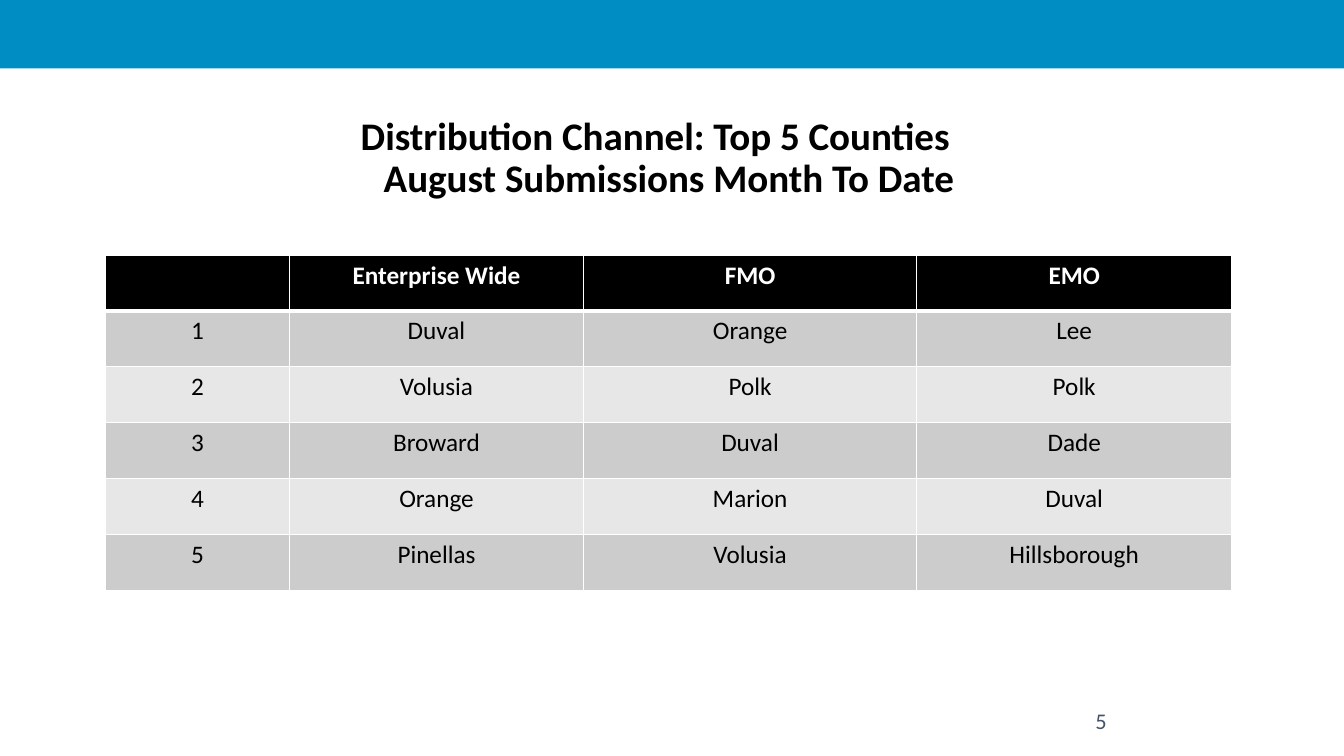
import lxml.etree
import pptx
import pptx.dml.color
import pptx.enum.shapes
import pptx.enum.text
import pptx.oxml.ns
import pptx.util

Inches = pptx.util.Inches
Anchor = pptx.enum.text.MSO_ANCHOR
COLORS = {
    "banner": "008DC4",
    "black": "000000",
    "white": "FFFFFF",
    "slate": "44546A",
    "odd": "CCCCCC",
    "even": "E7E7E7",
}
COLUMN_WIDTHS = [1.82, 2.92, 3.3, 3.13]
ROW_HEIGHT = 3.33 / 6
COUNTIES = [
    ["", "Enterprise Wide", "FMO", "EMO"],
    ["1", "Duval", "Orange", "Lee"],
    ["2", "Volusia", "Polk", "Polk"],
    ["3", "Broward", "Duval", "Dade"],
    ["4", "Orange", "Marion", "Duval"],
    ["5", "Pinellas", "Volusia", "Hillsborough"],
]


class SlideBuilder:
    font_name = "Calibri"

    def __init__(self, page):
        self.page = page

    def color(self, name):
        return pptx.dml.color.RGBColor.from_string(COLORS[name])

    def paint(self, item, color):
        item.fill.solid()
        item.fill.fore_color.rgb = self.color(color)

    def add_span(self, para, text, size, color, bold=False, **layout):
        para.alignment = pptx.enum.text.PP_ALIGN.CENTER
        for name, value in layout.items():
            setattr(para, name, value)
        span = para.add_run()
        span.text = text
        style = {"name": self.font_name, "size": pptx.util.Pt(size), "bold": bold}
        for name, value in style.items():
            setattr(span.font, name, value)
        span.font.color.rgb = self.color(color)

    def banner(self, left, top, width, height, color):
        kind = pptx.enum.shapes.MSO_SHAPE.RECTANGLE
        box = self.page.shapes.add_shape(
            kind, *map(Inches, (left, top, width, height)))
        box.shadow.inherit = False
        box.line.fill.background()
        self.paint(box, color)

    def text(self, left, top, width, height, lines, anchor, **style):
        box = self.page.shapes.add_textbox(
            *map(Inches, (left, top, width, height)))
        frame = box.text_frame
        frame.word_wrap = True
        frame.vertical_anchor = anchor
        for index, (line, indent) in enumerate(lines):
            para = frame.add_paragraph() if index else frame.paragraphs[0]
            if indent:
                para._p.get_or_add_pPr().set("marL", str(Inches(indent)))
            self.add_span(para, line, **style)

    def borders(self, cell, widths):
        properties = cell._tc.get_or_add_tcPr()
        for index, (side, width) in enumerate(widths.items()):
            line = lxml.etree.Element(
                pptx.oxml.ns.qn("a:ln" + side), w=str(pptx.util.Pt(width)))
            solid = lxml.etree.SubElement(line, pptx.oxml.ns.qn("a:solidFill"))
            lxml.etree.SubElement(
                solid, pptx.oxml.ns.qn("a:srgbClr"), val=COLORS["white"])
            properties.insert(index, line)

    def table(self, left, top, widths, row_height, rows):
        grid = self.page.shapes.add_table(
            len(rows), len(widths), Inches(left), Inches(top),
            Inches(sum(widths)), Inches(row_height * len(rows))).table
        for column, width in zip(grid.columns, widths):
            column.width = Inches(width)
        for row_index, values in enumerate(rows):
            header = row_index == 0
            band = "black" if header else ("even", "odd")[row_index % 2]
            grid.rows[row_index].height = Inches(row_height)
            for column_index, value in enumerate(values):
                cell = grid.cell(row_index, column_index)
                self.paint(cell, band)
                self.borders(cell, {
                    "L": 1, "R": 1,
                    "T": 3 if row_index == 1 else 1,
                    "B": 3 if header else 1,
                })
                if value:
                    self.add_span(cell.text_frame.paragraphs[0], value, 18,
                                  "white" if header else "black", header)


def main():
    deck = pptx.Presentation()
    deck.slide_width = Inches(13.33)
    deck.slide_height = Inches(7.5)
    builder = SlideBuilder(deck.slides.add_slide(deck.slide_layouts[6]))
    builder.banner(0, 0, 13.33, 0.68, "banner")
    title = [
        ("Distribution Channel: Top 5 Counties", 0),
        ("August Submissions Month To Date", 0.27),
    ]
    builder.text(1.05, 0.99, 10.9, 1.05, title, Anchor.BOTTOM,
                 size=27.9, color="black", bold=True, line_spacing=0.9)
    builder.text(9.42, 6.95, 3, 0.4, [("5", 0)], Anchor.MIDDLE,
                 size=16, color="slate", space_after=pptx.util.Pt(6))
    builder.table(1.05, 2.53, COLUMN_WIDTHS, ROW_HEIGHT, COUNTIES)
    deck.save("out.pptx")


if __name__ == "__main__":
    main()
